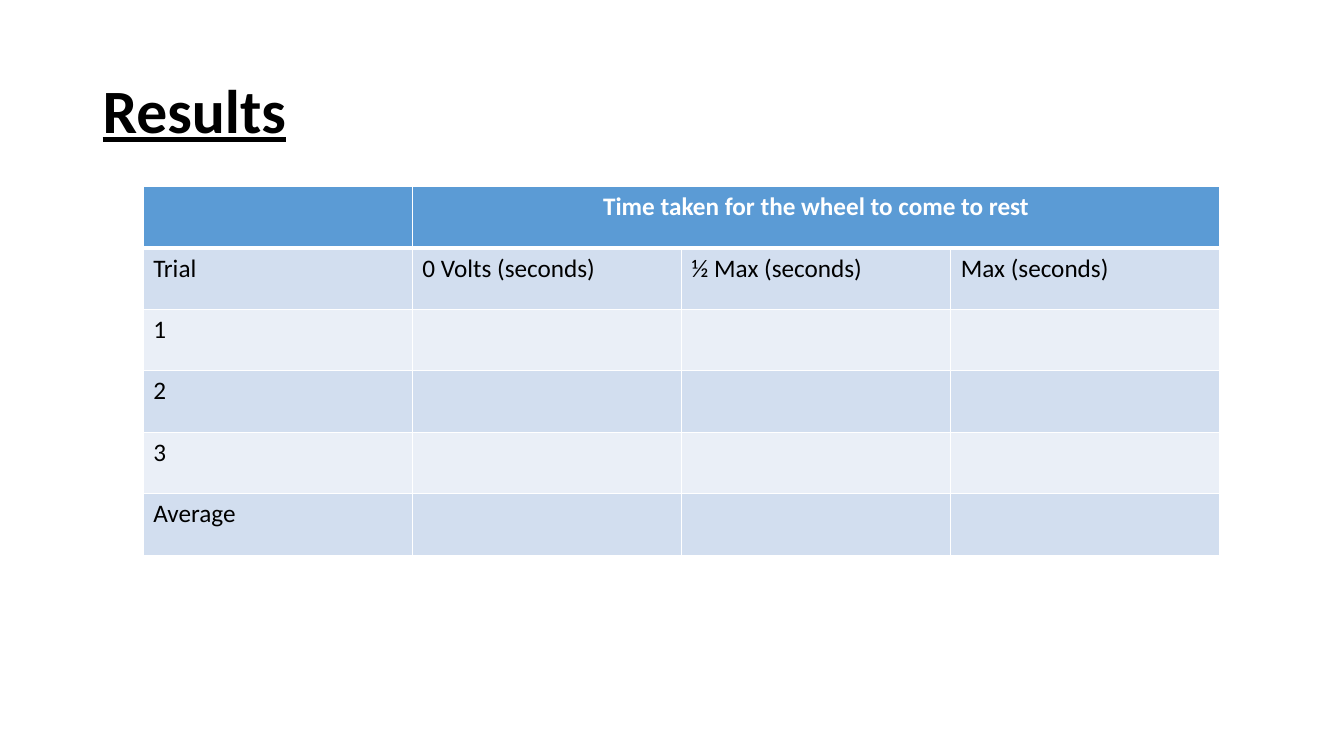
from lxml import etree
from pptx import Presentation
from pptx.dml.color import RGBColor
from pptx.enum import text
from pptx.oxml.ns import qn
from pptx.util import Inches, Pt

# Content
TITLE = "Results"
HEADING = "Time taken for the wheel to come to rest"
ROWS = [
    ("", HEADING, "", ""),
    ("Trial", "0 Volts (seconds)", "½ Max (seconds)", "Max (seconds)"),
    ("1", "", "", ""),
    ("2", "", "", ""),
    ("3", "", "", ""),
    ("Average", "", "", ""),
]

THEME = {
    "font": "Calibri", "title_size": 44, "body_size": 18,
    "ink": "000000", "white": "FFFFFF", "header": "5B9BD5",
    "bands": ("EAEFF7", "D2DEEF"), "line": 1, "header_line": 3,
}

# Layout in inches
TITLE_BOX = (0.92, 0.4, 11.5, 1.45)
TABLE_LEFT, TABLE_TOP = 1.42, 1.85
COL_W, ROW_H = 2.67, 0.61


def write(tf, words, size=THEME["body_size"], color=THEME["ink"], bold=False,
          underline=False, align=text.PP_ALIGN.LEFT, spacing=1.0):
    p = tf.paragraphs[0]
    p.alignment = align
    p.line_spacing = spacing
    r = p.add_run()
    r.text = words
    r.font.name = THEME["font"]
    r.font.size = Pt(size)
    r.font.bold = bold
    r.font.underline = underline
    r.font.color.rgb = RGBColor.from_string(color)


def set_borders(cell, top, bottom):
    tc_pr = cell._tc.get_or_add_tcPr()
    widths = {"lnL": THEME["line"], "lnR": THEME["line"], "lnT": top, "lnB": bottom}
    for i, (side, width) in enumerate(widths.items()):
        ln = etree.Element(qn(f"a:{side}"), w=str(Pt(width)))
        fill = etree.SubElement(ln, qn("a:solidFill"))
        etree.SubElement(fill, qn("a:srgbClr"), val=THEME["white"])
        tc_pr.insert(i, ln)


def add_title(slide):
    tf = slide.shapes.add_textbox(*map(Inches, TITLE_BOX)).text_frame
    tf.word_wrap = True
    tf.vertical_anchor = text.MSO_ANCHOR.MIDDLE
    write(tf, TITLE, size=THEME["title_size"], bold=True, underline=True, spacing=0.9)


def add_results(slide):
    n_rows, n_cols = len(ROWS), len(ROWS[0])
    table = slide.shapes.add_table(
        n_rows, n_cols, Inches(TABLE_LEFT), Inches(TABLE_TOP),
        Inches(COL_W * n_cols), Inches(ROW_H * n_rows)).table
    for col in table.columns:
        col.width = Inches(COL_W)
    for row in table.rows:
        row.height = Inches(ROW_H)
    table.cell(0, 1).merge(table.cell(0, n_cols - 1))

    for i, row in enumerate(ROWS):
        is_header = i == 0
        for j, words in enumerate(row):
            cell = table.cell(i, j)
            cell.fill.solid()
            cell.fill.fore_color.rgb = RGBColor.from_string(
                THEME["header"] if is_header else THEME["bands"][i % 2])
            set_borders(cell,
                        top=THEME["header_line"] if i == 1 else THEME["line"],
                        bottom=THEME["header_line"] if is_header else THEME["line"])
            if words and is_header:
                write(cell.text_frame, words, color=THEME["white"], bold=True,
                      align=text.PP_ALIGN.CENTER)
            elif words:
                write(cell.text_frame, words)


def main():
    prs = Presentation()
    prs.slide_width, prs.slide_height = Inches(13.33), Inches(7.5)
    slide = prs.slides.add_slide(prs.slide_layouts[6])
    add_title(slide)
    add_results(slide)
    prs.save("out.pptx")


if __name__ == "__main__":
    main()
